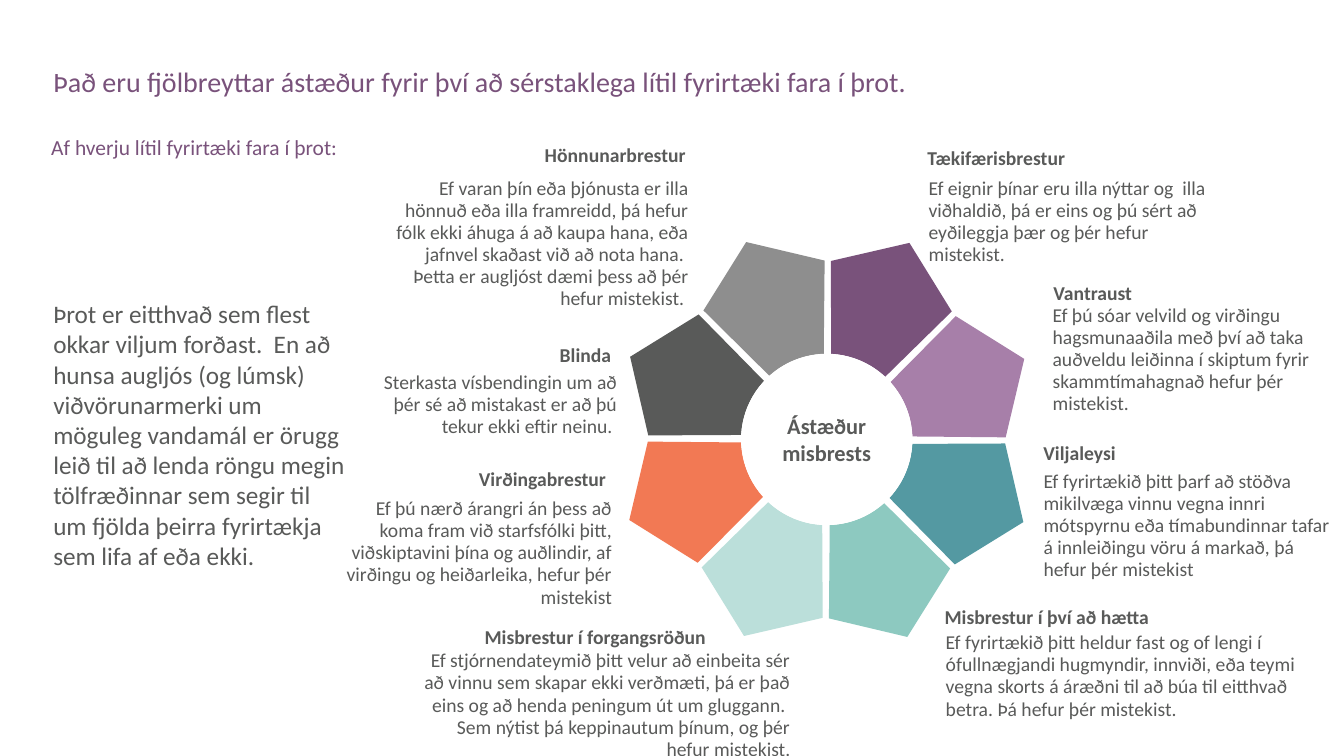
from dataclasses import dataclass
from math import cos, hypot, radians, sin

from pptx import Presentation
from pptx.dml.color import RGBColor
from pptx.enum.shapes import MSO_SHAPE
from pptx.enum.text import MSO_ANCHOR as Anchor, MSO_AUTO_SIZE as AutoSize, PP_ALIGN as Align
from pptx.util import Inches, Pt


@dataclass(frozen=True)
class Theme:
    font: str = "Calibri"
    plum: str = "79527B"
    grey: str = "595A59"
    white: str = "FFFFFF"
    # Clockwise from the top
    petals: tuple = ("79527B", "A77FA9", "5499A2", "8DC9C0",
                     "BBDFDA", "F27954", "595A59", "8E8E8E")
    title: float = 20
    intro: float = 18
    hub: float = 16
    subtitle: float = 15.3
    reason: float = 14


THEME = Theme()
WHEEL_CENTRE = (8.2, 4.36)
HUB_RADIUS = 0.85
LABEL_INSETS = (0.1, 0.05)
DETAIL_INSETS = (0.04, 0.02)

TITLE = "Það eru fjölbreyttar ástæður fyrir því að sérstaklega lítil fyrirtæki fara í þrot."
SUBTITLE = "Af hverju lítil fyrirtæki fara í þrot:"
INTRO = ("Þrot er eitthvað sem flest okkar viljum forðast.  En að hunsa augljós (og lúmsk) "
         "viðvörunarmerki um möguleg vandamál er örugg leið til að lenda röngu megin "
         "tölfræðinnar sem segir til um fjölda þeirra fyrirtækja sem lifa af eða ekki.")
HUB = "Ástæður misbrests"

# Alignment, heading, heading (left, top, width), detail, detail (left, top, width, height)
REASONS = [
    (Align.LEFT, "Tækifærisbrestur", (9.1, 1.39, 3.18),
     "Ef eignir þínar eru illa nýttar og  illa viðhaldið, þá er eins og þú sért að "
     "eyðileggja þær og þér hefur mistekist.", (9.17, 1.74, 3.04, 0.92)),
    (Align.LEFT, "Vantraust", (10.35, 2.73, 2.26),
     "Ef þú sóar velvild og virðingu hagsmunaaðila með því að taka auðveldu leiðinna í "
     "skiptum fyrir skammtímahagnað hefur þér mistekist.", (10.4, 3, 3.03, 1.15)),
    (Align.LEFT, "Viljaleysi", (10.25, 4.32, 2.19),
     "Ef fyrirtækið þitt þarf að stöðva mikilvæga vinnu vegna innri mótspyrnu eða "
     "tímabundinnar tafar á innleiðingu vöru á markað, þá hefur þér mistekist",
     (10.31, 4.65, 3.03, 1.15)),
    (Align.LEFT, "Misbrestur í því að hætta", (9.27, 5.94, 3.03),
     "Ef fyrirtækið þitt heldur fast og of lengi í ófullnægjandi hugmyndir, innviði, eða "
     "teymi vegna skorts á áræðni til að búa til eitthvað betra. Þá hefur þér mistekist.",
     (9.34, 6.25, 3.66, 0.92)),
    (Align.RIGHT, "Misbrestur í forgangsröðun", (4.31, 6.14, 2.79),
     "Ef stjórnendateymið þitt velur að einbeita sér að vinnu sem skapar ekki verðmæti, þá "
     "er það eins og að henda peningum út um gluggann.  Sem nýtist þá keppinautum þínum, og "
     "þér hefur mistekist.", (4.12, 6.43, 3.76, 1.15)),
    (Align.RIGHT, "Virðingabrestur", (3.96, 4.57, 2.15),
     "Ef þú nærð árangri án þess að koma fram við starfsfólki þitt, viðskiptavini þína og "
     "auðlindir, af virðingu og heiðarleika, hefur þér mistekist", (3.37, 4.92, 2.74, 1.15)),
    (Align.RIGHT, "Blinda", (4.22, 3.34, 1.94),
     "Sterkasta vísbendingin um að þér sé að mistakast er að þú tekur ekki eftir neinu. ",
     (3.74, 3.67, 2.42, 0.92)),
    (Align.RIGHT, "Hönnunarbrestur", (4.85, 1.36, 2.05),
     "Ef varan þín eða þjónusta er illa hönnuð eða illa framreidd, þá hefur fólk ekki áhuga "
     "á að kaupa hana, eða jafnvel skaðast við að nota hana.  Þetta er augljóst dæmi þess að "
     "þér hefur mistekist. ", (3.88, 1.74, 2.99, 1.37)),
]


def write(shape, text, size, color=THEME.grey, bold=False, align=Align.LEFT,
          anchor=Anchor.TOP, spacing=1.0, insets=LABEL_INSETS, auto_size=AutoSize.NONE):
    frame = shape.text_frame
    frame.word_wrap = True
    frame.auto_size = auto_size
    frame.vertical_anchor = anchor
    frame.margin_left = frame.margin_right = Inches(insets[0])
    frame.margin_top = frame.margin_bottom = Inches(insets[1])
    paragraph = frame.paragraphs[0]
    paragraph.alignment = align
    paragraph.line_spacing = spacing
    paragraph.space_before = Pt(0)
    run = paragraph.add_run()
    run.text = text
    run.font.name = THEME.font
    run.font.size = Pt(size)
    run.font.bold = bold
    run.font.color.rgb = RGBColor.from_string(color)


def add_text(slide, box, text, size, **style):
    write(slide.shapes.add_textbox(*map(Inches, box)), text, size, **style)


def add_title(slide):
    title = slide.shapes.title
    title.left, title.top, title.width, title.height = map(Inches, (0.43, 0.63, 12.54, 0.64))
    write(title, TITLE, THEME.title, color=THEME.plum, spacing=0.9)


def paint(shape, color):
    shape.shadow.inherit = False
    shape.fill.solid()
    shape.fill.fore_color.rgb = RGBColor.from_string(color)
    shape.line.fill.background()


def petal_outline():
    """Points of the first petal, relative to the wheel centre."""
    outer = [(0.04, -1.77), (0.82, -1.95), (1.24, -1.27)]
    inner = [(HUB_RADIUS * sin(radians(a)), -HUB_RADIUS * cos(radians(a)))
             for a in range(43, 2, -4)]
    return outer + inner


def add_petal(slide, index, color):
    turn = radians(index * 360 / len(THEME.petals))
    cx, cy = WHEEL_CENTRE
    points = [(Inches(cx + x * cos(turn) - y * sin(turn)),
               Inches(cy + x * sin(turn) + y * cos(turn))) for x, y in petal_outline()]
    builder = slide.shapes.build_freeform(*points[0])
    builder.add_line_segments(points[1:], close=True)
    paint(builder.convert_to_shape(), color)


def add_hub(slide):
    cx, cy = WHEEL_CENTRE
    box = (cx - HUB_RADIUS, cy - HUB_RADIUS, 2 * HUB_RADIUS, 2 * HUB_RADIUS)
    hub = slide.shapes.add_shape(MSO_SHAPE.OVAL, *map(Inches, box))
    paint(hub, THEME.white)
    write(hub, HUB, THEME.hub, bold=True, align=Align.CENTER, anchor=Anchor.MIDDLE)


def add_reason(slide, align, heading, heading_box, detail, detail_box):
    add_text(slide, (*heading_box, 0.34), heading, THEME.reason, bold=True, align=align,
             anchor=Anchor.BOTTOM, auto_size=AutoSize.SHAPE_TO_FIT_TEXT)
    add_text(slide, detail_box, detail, THEME.reason, align=align, spacing=0.94,
             insets=DETAIL_INSETS, auto_size=AutoSize.SHAPE_TO_FIT_TEXT)


def main():
    deck = Presentation()
    deck.slide_width, deck.slide_height = Inches(13.33), Inches(7.5)
    slide = deck.slides.add_slide(deck.slide_layouts[5])
    add_title(slide)
    add_text(slide, (0.41, 1.35, 12.56, 0.28), SUBTITLE, THEME.subtitle,
             color=THEME.plum, spacing=0.7)
    add_text(slide, (0.43, 1.79, 3.11, 5.04), INTRO, THEME.intro, anchor=Anchor.MIDDLE)
    for index, color in enumerate(THEME.petals):
        add_petal(slide, index, color)
    add_hub(slide)
    for reason in REASONS:
        add_reason(slide, *reason)
    deck.save("out.pptx")


if __name__ == "__main__":
    main()
